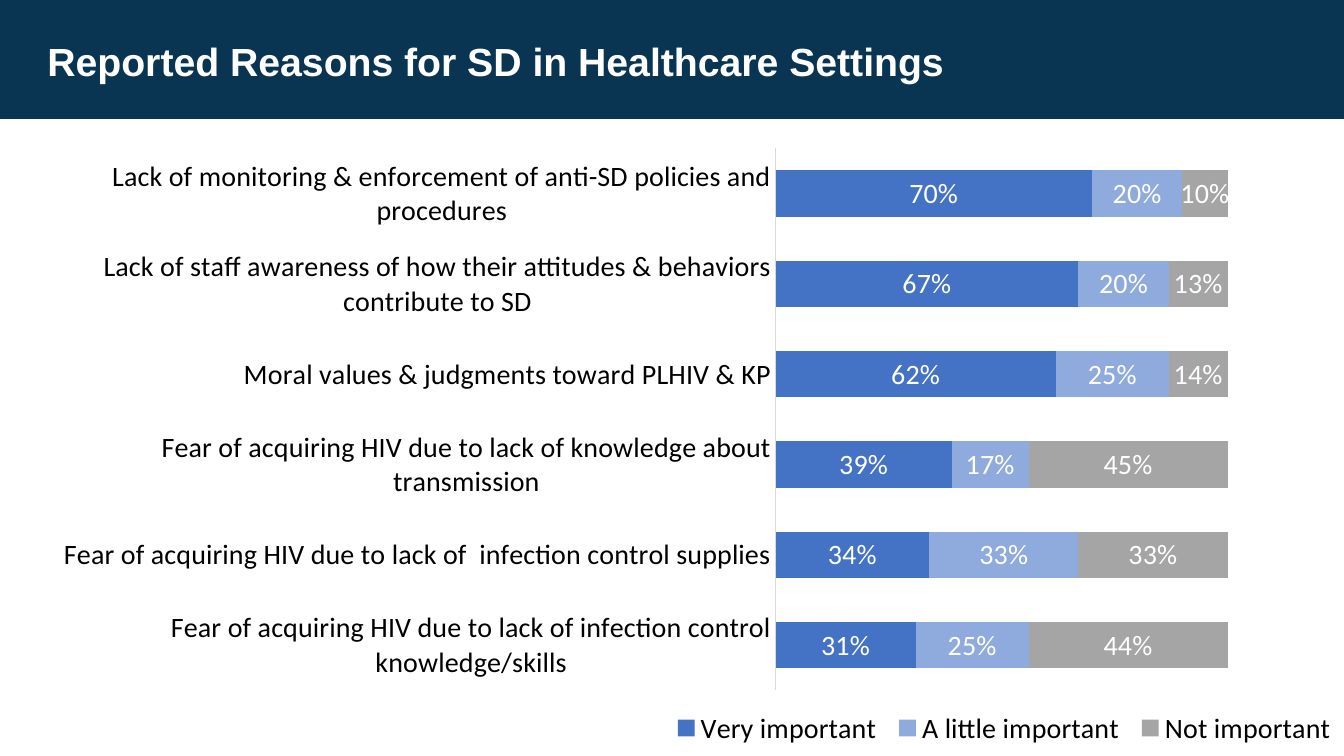
from dataclasses import dataclass

import pptx
import pptx.chart.data
import pptx.dml.color
import pptx.enum.chart
import pptx.enum.shapes
import pptx.enum.text
import pptx.oxml
import pptx.oxml.ns
import pptx.util
from pptx.util import Inches


@dataclass(frozen=True)
class Theme:
    banner: str = "093552"
    light: str = "FFFFFF"
    text: str = "000000"
    axis: str = "D9D9D9"
    series: tuple = ("4472C4", "8FAADC", "A5A5A5")
    title_font: str = "Arial"
    chart_font: str = "Calibri"
    title_size: int = 28
    chart_size: int = 20


THEME = Theme()

REASONS = {
    "Fear of acquiring HIV due to lack of infection control knowledge/skills": (0.31, 0.25, 0.44),
    "Fear of acquiring HIV due to lack of  infection control supplies": (0.34, 0.33, 0.33),
    "Fear of acquiring HIV due to lack of knowledge about transmission": (0.39, 0.17, 0.45),
    "Moral values & judgments toward PLHIV & KP": (0.62, 0.25, 0.14),
    "Lack of staff awareness of how their attitudes & behaviors contribute to SD": (0.67, 0.2, 0.13),
    "Lack of monitoring & enforcement of anti-SD policies and procedures": (0.7, 0.2, 0.1),
}
RATINGS = ("Very important", "A little important", "Not important")


def rgb(value):
    return pptx.dml.color.RGBColor.from_string(value)


def set_font(font, name, size, color, bold=False):
    font.name = name
    font.size = pptx.util.Pt(size)
    font.color.rgb = rgb(color)
    font.bold = bold


def set_layout(element, x, y, w, h, inner=False):
    for old in element.findall(pptx.oxml.ns.qn("c:layout")):
        element.remove(old)
    target = '<c:layoutTarget val="inner"/>' if inner else ""
    layout = pptx.oxml.parse_xml(
        f'<c:layout {pptx.oxml.ns.nsdecls("c")}><c:manualLayout>{target}'
        '<c:xMode val="edge"/><c:yMode val="edge"/>'
        f'<c:x val="{x}"/><c:y val="{y}"/><c:w val="{w}"/><c:h val="{h}"/>'
        "</c:manualLayout></c:layout>"
    )
    element.insert(0 if inner else 1, layout)


def add_banner(s, width):
    sp = s.shapes.add_shape(
        pptx.enum.shapes.MSO_SHAPE.RECTANGLE, 0, 0, width, Inches(1.18)
    )
    sp.shadow.inherit = False
    sp.fill.solid()
    sp.fill.fore_color.rgb = rgb(THEME.banner)
    sp.line.fill.background()
    s.shapes._spTree.insert(2, sp._element)


def set_title(s, text):
    sp = s.shapes.title
    sp.left, sp.top = Inches(0.37), Inches(0.37)
    sp.width, sp.height = Inches(12.04), Inches(0.8)
    tf = sp.text_frame
    tf.text = text
    tf.word_wrap = True
    tf.auto_size = pptx.enum.text.MSO_AUTO_SIZE.NONE
    tf.vertical_anchor = pptx.enum.text.MSO_ANCHOR.TOP
    p = tf.paragraphs[0]
    p.alignment = pptx.enum.text.PP_ALIGN.LEFT
    p.line_spacing = 0.9
    set_font(p.font, THEME.title_font, THEME.title_size, THEME.light, bold=True)


def format_axes(chart):
    axis = chart.category_axis
    axis.major_tick_mark = pptx.enum.chart.XL_TICK_MARK.NONE
    axis.has_major_gridlines = False
    axis.format.line.color.rgb = rgb(THEME.axis)
    axis.format.line.width = pptx.util.Pt(0.75)
    set_font(axis.tick_labels.font, THEME.chart_font, THEME.chart_size, THEME.text)
    values = chart.value_axis
    values.minimum_scale, values.maximum_scale = 0, 1
    values.has_major_gridlines = False
    values.visible = False


def format_series(series, color):
    series.format.fill.solid()
    series.format.fill.fore_color.rgb = rgb(color)
    labels = series.data_labels
    labels.show_value = True
    labels.number_format = "0%"
    labels.number_format_is_linked = False
    labels.position = pptx.enum.chart.XL_LABEL_POSITION.CENTER
    set_font(labels.font, THEME.chart_font, THEME.chart_size, THEME.light)


def format_legend(chart):
    chart.has_legend = True
    legend = chart.legend
    legend.position = pptx.enum.chart.XL_LEGEND_POSITION.BOTTOM
    legend.include_in_layout = False
    set_font(legend.font, THEME.chart_font, THEME.chart_size, THEME.text)
    set_layout(legend._element, 0.48, 0.92, 0.52, 0.07)


def add_reasons_chart(s):
    data = pptx.chart.data.CategoryChartData(number_format="0%")
    data.categories = list(REASONS)
    for name, values in zip(RATINGS, zip(*REASONS.values())):
        data.add_series(name, values)
    chart = s.shapes.add_chart(
        pptx.enum.chart.XL_CHART_TYPE.BAR_STACKED,
        Inches(0.37), Inches(1.35), Inches(12.96), Inches(6.15), data,
    ).chart
    chart.has_title = False
    set_font(chart.font, THEME.chart_font, THEME.chart_size, THEME.text)
    plot = chart.plots[0]
    plot.gap_width, plot.overlap = 95, 100
    plot.vary_by_categories = False
    for series, color in zip(plot.series, THEME.series):
        format_series(series, color)
    format_axes(chart)
    format_legend(chart)
    plot_area = chart._chartSpace.chart.plotArea
    set_layout(plot_area, 0.565, 0.02, 0.346, 0.874, inner=True)


def main():
    prs = pptx.Presentation()
    prs.slide_width, prs.slide_height = Inches(13.33), Inches(7.5)
    s = prs.slides.add_slide(prs.slide_layouts[5])
    add_banner(s, prs.slide_width)
    set_title(s, "Reported Reasons for SD in Healthcare Settings")
    add_reasons_chart(s)
    prs.save("out.pptx")


if __name__ == "__main__":
    main()
